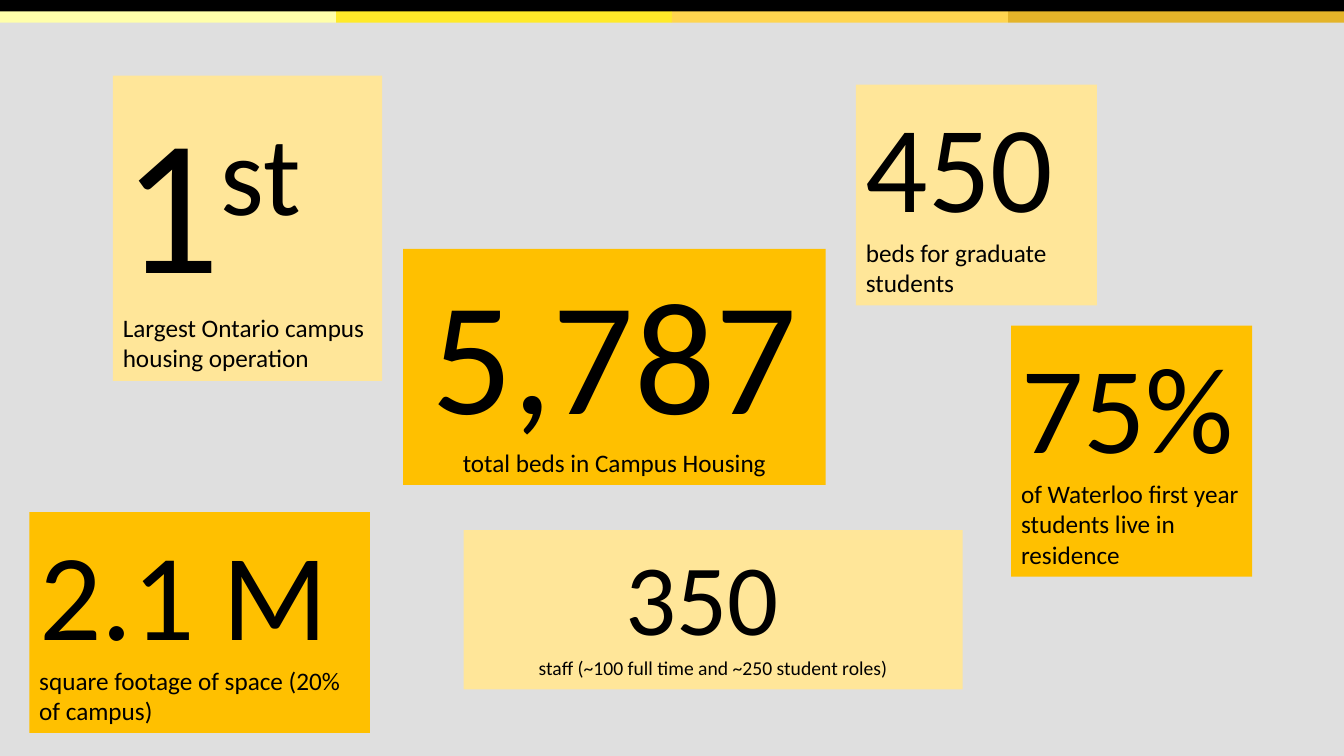
from pptx import Presentation
from pptx.dml.color import RGBColor
from pptx.enum.shapes import MSO_SHAPE
from pptx.enum.text import MSO_ANCHOR, MSO_AUTO_SIZE, PP_ALIGN
from pptx.util import Inches, Pt

RECTANGLE = MSO_SHAPE.RECTANGLE
TOP = MSO_ANCHOR.TOP
GROW = MSO_AUTO_SIZE.SHAPE_TO_FIT_TEXT
LEFT, CENTER = PP_ALIGN.LEFT, PP_ALIGN.CENTER

BLACK = RGBColor(0x00, 0x00, 0x00)
GREY = RGBColor(0xDF, 0xDF, 0xDF)
CREAM = RGBColor(0xFF, 0xE6, 0x99)
GOLD = RGBColor(0xFF, 0xC0, 0x00)
STRIPE_COLOURS = (
    RGBColor(0xFF, 0xFF, 0xAA),
    RGBColor(0xFF, 0xEA, 0x29),
    RGBColor(0xFF, 0xD5, 0x4F),
    RGBColor(0xE4, 0xB4, 0x29),
)
FONT = "Calibri"


def add_text(paragraph, text, size, color=BLACK, superscript=False):
    run = paragraph.add_run()
    run.text = text
    run.font.name = FONT
    run.font.size = Pt(size)
    run.font.color.rgb = color
    if superscript:
        run.font._element.set("baseline", "30000")


class FactSlide:
    """Draws housing facts on one slide, with lengths in percent of its size."""

    def __init__(self, deck):
        self.column = deck.slide_width / 100
        self.row = deck.slide_height / 100
        self.slide = deck.slides.add_slide(deck.slide_layouts[6])
        self.slide.background.fill.solid()
        self.slide.background.fill.fore_color.rgb = GREY

    def block(self, left, top, width, height, colour):
        block = self.slide.shapes.add_shape(
            RECTANGLE,
            round(left * self.column), round(top * self.row),
            round(width * self.column), round(height * self.row),
        )
        block.shadow.inherit = False
        block.fill.solid()
        block.fill.fore_color.rgb = colour
        block.line.fill.background()
        return block

    def header(self):
        self.block(0, 0, 100, 1.6, BLACK)
        stripe_width = 100 / len(STRIPE_COLOURS)
        for index, colour in enumerate(STRIPE_COLOURS):
            self.block(index * stripe_width, 1.5, stripe_width, 1.5, colour)

    def fact(self, area, colour, figure, figure_size, caption,
             caption_size=18, align=LEFT, suffix=""):
        frame = self.block(*area, colour).text_frame
        frame.word_wrap = True
        frame.vertical_anchor = TOP
        frame.auto_size = GROW
        headline, description = frame.paragraphs[0], frame.add_paragraph()
        headline.alignment = description.alignment = align
        add_text(headline, figure, figure_size)
        if suffix:
            add_text(headline, suffix, figure_size, superscript=True)
        add_text(description, caption, caption_size)


def main():
    deck = Presentation()
    deck.slide_width, deck.slide_height = Inches(13.33), Inches(7.5)
    facts = FactSlide(deck)
    facts.header()
    facts.fact((8.4, 10, 20.03, 40.4), CREAM, "1", 138,
               "Largest Ontario campus housing operation", suffix="st")
    facts.fact((30, 32.93, 31.43, 31.2), GOLD, "5,787", 115,
               "total beds in Campus Housing", align=CENTER)
    facts.fact((75.23, 43.07, 17.93, 33.2), GOLD, "75%", 88,
               "of Waterloo first year students live in residence")
    facts.fact((63.68, 11.2, 17.93, 29.2), CREAM, "450", 88,
               "beds for graduate students")
    facts.fact((2.18, 67.73, 25.35, 29.2), GOLD, "2.1 M", 88,
               "square footage of space (20% of campus)")
    facts.fact((34.5, 70.13, 37.13, 21.07), CREAM, "350 ", 72,
               "staff (~100 full time and ~250 student roles)",
               caption_size=14, align=CENTER)
    deck.save("out.pptx")


if __name__ == "__main__":
    main()
